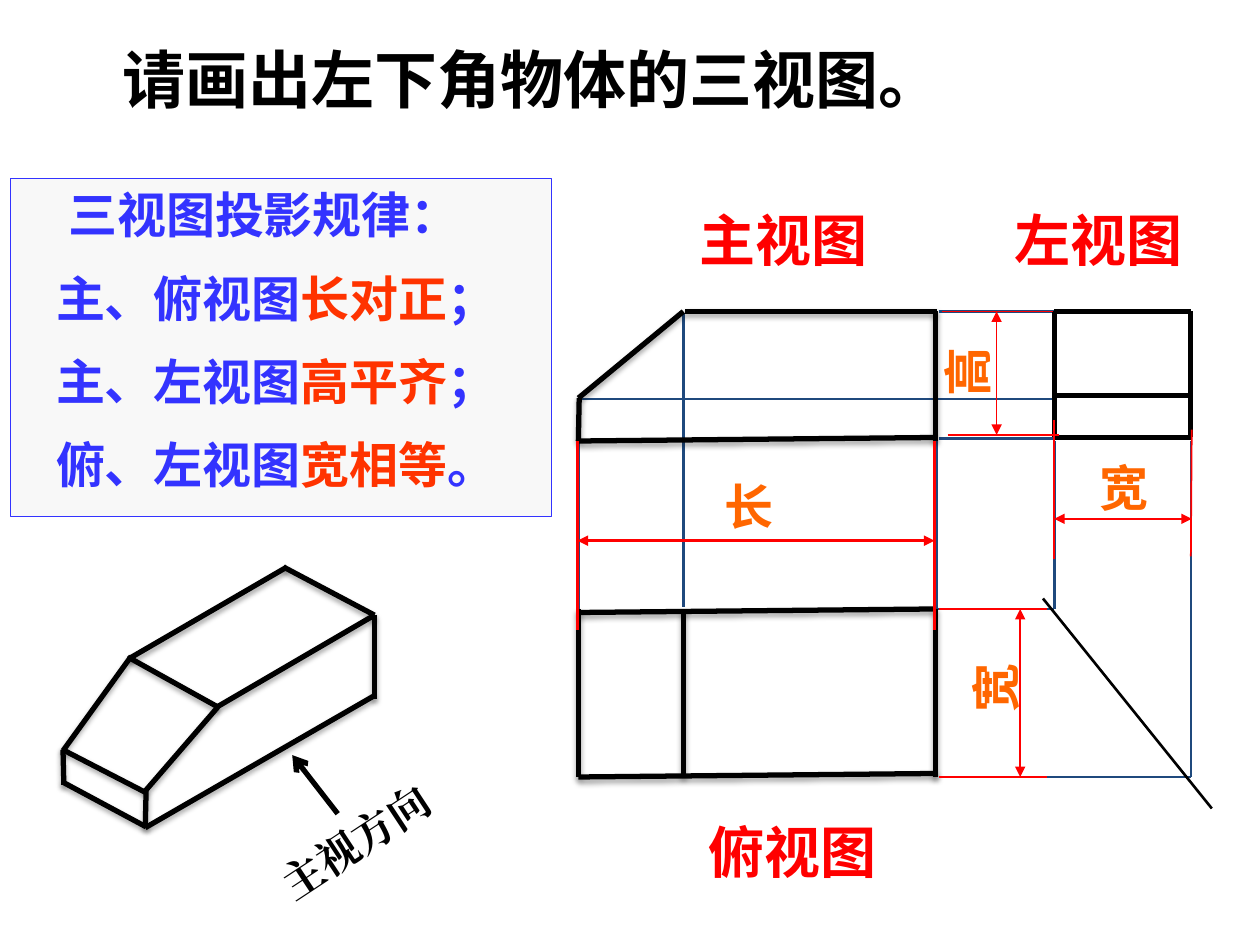
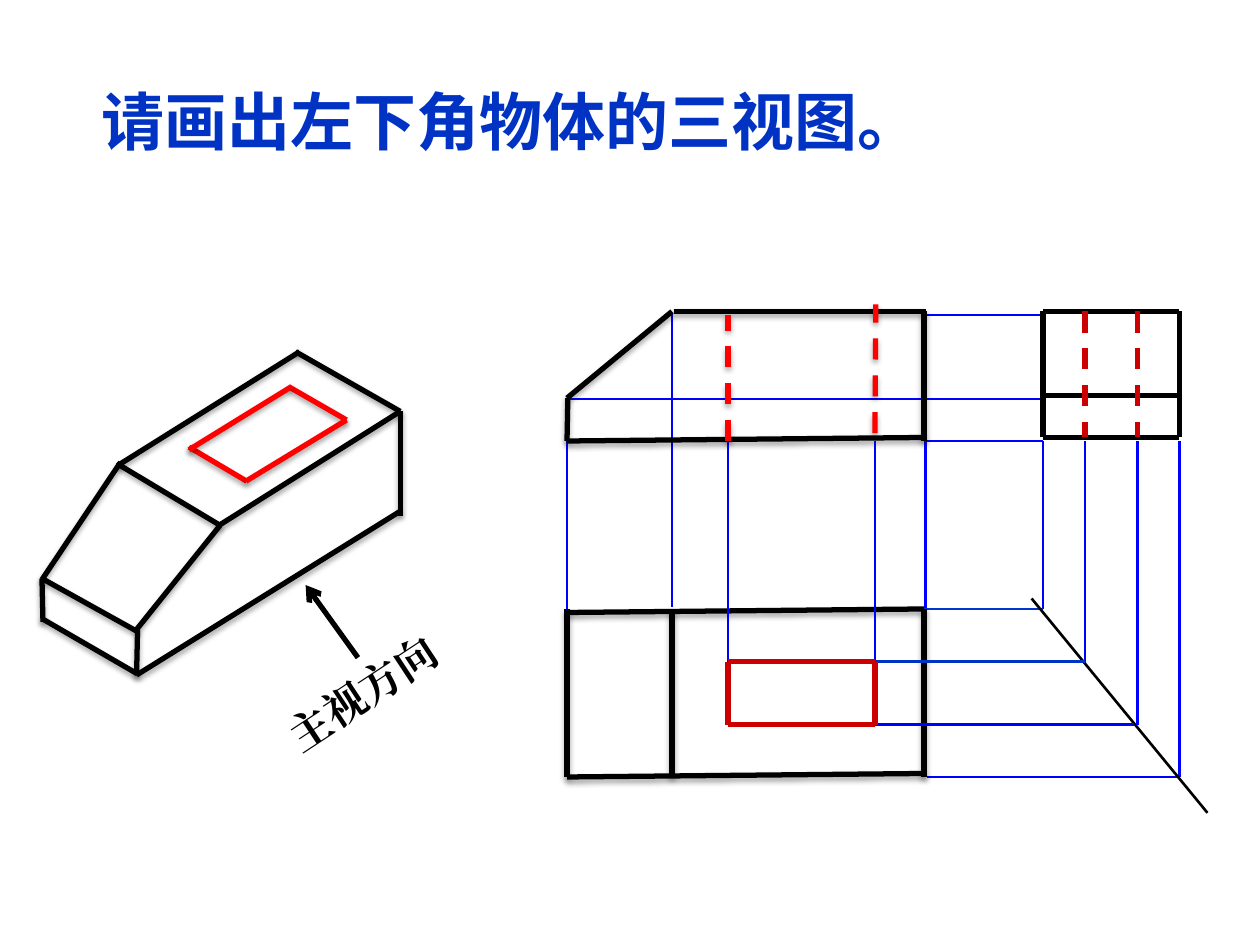
from dataclasses import dataclass
from typing import Iterable, NamedTuple

import pptx
import pptx.dml.color
import pptx.enum.dml
import pptx.enum.shapes
import pptx.enum.text
import pptx.oxml.ns
import pptx.util
from lxml import etree

Pt = pptx.util.Pt


@dataclass(frozen=True)
class Theme:
    black: str = "000000"
    title_blue: str = "0033C4"
    navy: str = "1F497D"
    blue: str = "0000FF"
    mid_blue: str = "0036D0"
    rule_blue: str = "3333FF"
    rule_red: str = "FF3300"
    red: str = "FF0000"
    dark_red: str = "CC0000"
    orange: str = "FF6600"
    panel: str = "F8F8F8"
    sans: str = "Arial"
    serif: str = "Times New Roman"
    heading: str = "Noto Sans CJK SC"
    title_size: float = 36
    view_size: float = 32
    rule_size: float = 28
    direction_size: float = 24
    outline: float = 3
    projection: float = 1.5


THEME = Theme()


class Edge(NamedTuple):
    x1: float
    y1: float
    x2: float
    y2: float


class Box(NamedTuple):
    left: float
    top: float
    width: float
    height: float


@dataclass(frozen=True)
class Stroke:
    color: str
    width: float
    dashed: bool = False
    shadow: bool = False
    head: str = ""
    tail: str = ""


@dataclass(frozen=True)
class Placement:
    dx: float = 0
    dy: float = 0
    x_scale: float = 1
    y_scale: float = 1

    def edge(self, e: Edge) -> Edge:
        return Edge(e.x1 * self.x_scale + self.dx, e.y1 * self.y_scale + self.dy,
                    e.x2 * self.x_scale + self.dx, e.y2 * self.y_scale + self.dy)

    def box(self, b: Box) -> Box:
        return Box(b.left * self.x_scale + self.dx, b.top * self.y_scale + self.dy,
                   b.width * self.x_scale, b.height * self.y_scale)


@dataclass(frozen=True)
class Dimension:
    label: str
    box: Box
    measure: Edge
    extensions: tuple[Edge, Edge]
    rotation: float = 0
    width: float = 1


IN_PLACE = Placement()
SOLID_OUTLINE = Stroke(THEME.black, THEME.outline, shadow=True)
PLAIN_OUTLINE = Stroke(THEME.black, THEME.outline)
HOLE_OUTLINE = Stroke(THEME.dark_red, THEME.outline)
HIDDEN_EDGE = Stroke(THEME.dark_red, THEME.outline, dashed=True)
HIDDEN_FRONT_EDGE = Stroke(THEME.red, THEME.outline, dashed=True, shadow=True)
SIGHT_ARROW = Stroke(THEME.black, THEME.outline, tail="arrow")
MITER = Stroke(THEME.black, THEME.projection)

FRONT_VIEW = (
    Edge(385, 178, 529, 178), Edge(324, 252, 528, 250), Edge(324, 227.5, 384, 178),
    Edge(324, 252, 324.5, 227.5), Edge(528, 252, 528, 178),
)
TOP_VIEW = (
    Edge(324, 444, 529, 442), Edge(528, 444, 528, 348), Edge(324, 444, 324, 348),
    Edge(324, 350, 528, 348), Edge(384, 444, 384, 348),
)
LEFT_VIEW = (
    *(Edge(x, 250, x, 178) for x in (596, 674)),
    *(Edge(596, y, 674, y) for y in (226, 178, 250)),
)
PROJECTIONS = (
    Edge(530, 444, 674, 444), Edge(596, 348, 596, 252), Edge(674, 444, 674, 252),
    Edge(326, 228, 596, 228), Edge(384, 179, 384, 347),
    Edge(324, 252, 324, 348), Edge(529, 252, 529, 348),
)
DEPTH_PROJECTION = Edge(528, 348, 596, 348)
SOLID = (
    Edge(75, 376.5, 124.5, 404), Edge(162, 324, 214, 351.5), Edge(124, 404, 214, 351.5),
    Edge(83, 452, 124.5, 404), Edge(214, 399.5, 214, 351.5), Edge(83, 473, 83.5, 452),
    Edge(36, 428.5, 83.5, 453), Edge(83, 473, 214, 397.5), Edge(73.5, 376.5, 164, 324),
    Edge(36.5, 448.5, 36, 428.5), Edge(36, 447, 83.5, 472.5), Edge(36, 429, 75, 375),
)
SIGHT_LINE = Edge(193, 465, 167, 431.5)
SIGHT_LABEL = Box(144, 456.5, 135.5, 29.5)
SOLID_HOLE = (
    Edge(108, 255.5, 141, 275), Edge(165, 221, 198, 240),
    Edge(140.5, 275, 198, 240), Edge(108, 257, 166.5, 221),
)
DIMENSIONS = (
    Dimension("长", Box(407, 268.5, 46, 41), Edge(330, 309, 534, 309),
              (Edge(330, 252, 330, 360), Edge(534, 252, 534, 360)), width=0),
    Dimension("高", Box(531.5, 192, 42, 41), Edge(569.5, 178, 569.5, 248.5),
              (Edge(538.5, 178, 602, 178), Edge(541.5, 248.5, 605, 248.5)), rotation=270),
    Dimension("宽", Box(541.5, 366.5, 54, 41), Edge(583, 348, 583, 444),
              (Edge(536.5, 348, 598.5, 348), Edge(536.5, 444, 598.5, 444)), rotation=270),
    Dimension("宽", Box(621.5, 258, 50.5, 41), Edge(602.5, 296.5, 681, 296.5),
              (Edge(602.5, 240, 602.5, 319.5), Edge(680.5, 318, 681, 245.5))),
)
VIEW_NAMES = (
    ("主视图", Box(392.5, 114, 111.5, 46)),
    ("俯视图", Box(398, 463.5, 111.5, 46)),
    ("左视图", Box(572.5, 114, 111.5, 46)),
)
RULES = (
    ("主、俯视图", "长对正", "；"),
    ("主、左视图", "高平齐", "；"),
    ("俯、左视图", "宽相等", "。"),
)


def rgb(color: str) -> pptx.dml.color.RGBColor:
    return pptx.dml.color.RGBColor.from_string(color)


def sub(parent, tag: str, **attributes):
    return etree.SubElement(parent, pptx.oxml.ns.qn(tag),
                            {key: str(value) for key, value in attributes.items()})


def write(paragraph, text: str, *, size: float, color: str, font: str = THEME.sans) -> None:
    run = paragraph.add_run()
    run.text = text
    run.font.size = Pt(size)
    run.font.bold = True
    run.font.name = font
    run.font.color.rgb = rgb(color)
    sub(run.font._element, "a:ea", typeface=font)


def place(box: Box) -> list:
    return [Pt(length) for length in box]


def draw_edge(shapes, edge: Edge, stroke: Stroke) -> None:
    connector = shapes.add_connector(pptx.enum.shapes.MSO_CONNECTOR.STRAIGHT,
                                     *(Pt(value) for value in edge))
    connector.line.color.rgb = rgb(stroke.color)
    connector.line.width = Pt(stroke.width)
    if stroke.dashed:
        connector.line.dash_style = pptx.enum.dml.MSO_LINE.DASH
    properties = connector._element.spPr
    line = properties.find(pptx.oxml.ns.qn("a:ln"))
    for tag, kind in (("a:headEnd", stroke.head), ("a:tailEnd", stroke.tail)):
        if kind:
            sub(line, tag, type=kind)
    effects = sub(properties, "a:effectLst")
    if stroke.shadow:
        shadow = sub(effects, "a:outerShdw", blurRad=int(Pt(3.1)), dist=int(Pt(1.8)),
                     dir=90 * 60000, rotWithShape=0)
        sub(sub(shadow, "a:srgbClr", val=THEME.black), "a:alpha", val=35000)


def draw_edges(shapes, edges: Iterable[Edge], stroke: Stroke,
               placement: Placement = IN_PLACE) -> None:
    for edge in edges:
        draw_edge(shapes, placement.edge(edge), stroke)


def draw_label(shapes, text: str, box: Box, *, rotation: float = 0, **text_format) -> None:
    label = shapes.add_textbox(*place(box))
    label.rotation = rotation
    label.text_frame.word_wrap = True
    write(label.text_frame.paragraphs[0], text, **text_format)


def draw_title(slide, box: Box, color: str) -> None:
    title = slide.shapes.title
    title.left, title.top, title.width, title.height = place(box)
    frame = title.text_frame
    frame.margin_left = Pt(40)
    frame.vertical_anchor = pptx.enum.text.MSO_ANCHOR.MIDDLE
    frame.paragraphs[0].alignment = pptx.enum.text.PP_ALIGN.LEFT
    write(frame.paragraphs[0], "请画出左下角物体的三视图。",
          size=THEME.title_size, color=color, font=THEME.heading)


def draw_views(slide, placement: Placement, color: str, depth_color: str,
               height_levels: tuple[float, float], miter: Edge) -> None:
    shapes = slide.shapes
    projection = Stroke(color, THEME.projection)
    heights = [Edge(530, y, 596, y) for y in height_levels]
    draw_edges(shapes, (*heights, *PROJECTIONS), projection, placement)
    draw_edge(shapes, placement.edge(DEPTH_PROJECTION), Stroke(depth_color, THEME.projection))
    draw_edge(shapes, miter, MITER)
    draw_edges(shapes, LEFT_VIEW, PLAIN_OUTLINE, placement)
    draw_edges(shapes.add_group_shape().shapes, FRONT_VIEW, SOLID_OUTLINE, placement)
    draw_edges(shapes, TOP_VIEW, SOLID_OUTLINE, placement)


def draw_solid(slide, placement: Placement, hole: Iterable[Edge] = ()) -> None:
    shapes = slide.shapes.add_group_shape().shapes
    draw_label(shapes, "主视方向", placement.box(SIGHT_LABEL), rotation=326.6,
               size=THEME.direction_size, color=THEME.black, font=THEME.serif)
    draw_edges(shapes, SOLID, SOLID_OUTLINE, placement)
    draw_edge(shapes, placement.edge(SIGHT_LINE), SIGHT_ARROW)
    draw_edges(shapes, hole, Stroke(THEME.red, THEME.outline, shadow=True))


def draw_dimension(slide, dimension: Dimension) -> None:
    shapes = slide.shapes.add_group_shape().shapes
    draw_edge(shapes, dimension.measure,
              Stroke(THEME.red, dimension.width, head="triangle", tail="triangle"))
    draw_edges(shapes, dimension.extensions, Stroke(THEME.red, dimension.width))
    draw_label(shapes, dimension.label, dimension.box, rotation=dimension.rotation,
               size=THEME.rule_size, color=THEME.orange)


def draw_rules(slide) -> None:
    panel = slide.shapes.add_shape(pptx.enum.shapes.MSO_SHAPE.RECTANGLE,
                                   *place(Box(6, 102, 309, 193)))
    panel.shadow.inherit = False
    panel.fill.solid()
    panel.fill.fore_color.rgb = rgb(THEME.panel)
    panel.line.color.rgb = rgb(THEME.rule_blue)
    panel.line.width = Pt(0.75)
    frame = panel.text_frame
    frame.word_wrap = True
    frame.margin_left = Pt(26)
    frame.vertical_anchor = pptx.enum.text.MSO_ANCHOR.TOP
    heading = frame.paragraphs[0]
    heading._p.get_or_add_pPr().set("marL", str(int(Pt(7))))
    write(heading, "三视图投影规律：", size=THEME.rule_size, color=THEME.rule_blue)
    for rule in RULES:
        paragraph = frame.add_paragraph()
        paragraph.space_before = Pt(THEME.rule_size / 2)
        for text, color in zip(rule, (THEME.rule_blue, THEME.rule_red, THEME.rule_blue)):
            write(paragraph, text, size=THEME.rule_size, color=color)
    for paragraph in frame.paragraphs:
        paragraph.alignment = pptx.enum.text.PP_ALIGN.LEFT


def draw_hole_views(slide) -> None:
    shapes = slide.shapes
    left, right, back, front = 416, 500, 378, 414
    near, far = 620, 650
    draw_edges(shapes, (*(Edge(x, 252, x, back) for x in (left, right, near)),
                        Edge(far, 252, far, front), Edge(648, front, 498, front)),
               Stroke(THEME.blue, THEME.projection))
    draw_edge(shapes, Edge(near, back, right, back), Stroke(THEME.title_blue, THEME.projection))
    draw_edges(shapes, (*(Edge(x, back, x, front) for x in (left, right)),
                        *(Edge(right, y, left, y) for y in (back, front))), HOLE_OUTLINE)
    draw_edges(shapes, (Edge(x, 178, x, 250) for x in (near, far)), HIDDEN_EDGE)
    draw_edges(shapes, (Edge(left, 252, left, 180), Edge(right, 247.5, 500.5, 174)),
               HIDDEN_FRONT_EDGE)


def main() -> None:
    deck = pptx.Presentation()
    deck.slide_width, deck.slide_height = Pt(720), Pt(540)
    title_only = deck.slide_layouts[5]

    rules_slide = deck.slides.add_slide(title_only)
    draw_title(rules_slide, Box(30, 0, 648, 90), THEME.black)
    draw_views(rules_slide, Placement(dx=6.5), THEME.navy, THEME.navy, (178, 250.5),
               Edge(596, 342, 692.5, 462))
    draw_solid(rules_slide, IN_PLACE)
    for dimension in DIMENSIONS:
        draw_dimension(rules_slide, dimension)
    draw_rules(rules_slide)
    for name, box in VIEW_NAMES:
        draw_label(rules_slide.shapes, name, box, size=THEME.view_size, color=THEME.red)

    hole_slide = deck.slides.add_slide(title_only)
    draw_title(hole_slide, Box(18, 24, 648, 90), THEME.title_blue)
    draw_views(hole_slide, IN_PLACE, THEME.blue, THEME.mid_blue, (180, 252),
               Edge(589.5, 342, 690, 464.5))
    draw_hole_views(hole_slide)
    draw_solid(hole_slide, Placement(-17.4, -200.76, 1.15, 1.24), SOLID_HOLE)

    deck.save("out.pptx")


if __name__ == "__main__":
    main()
